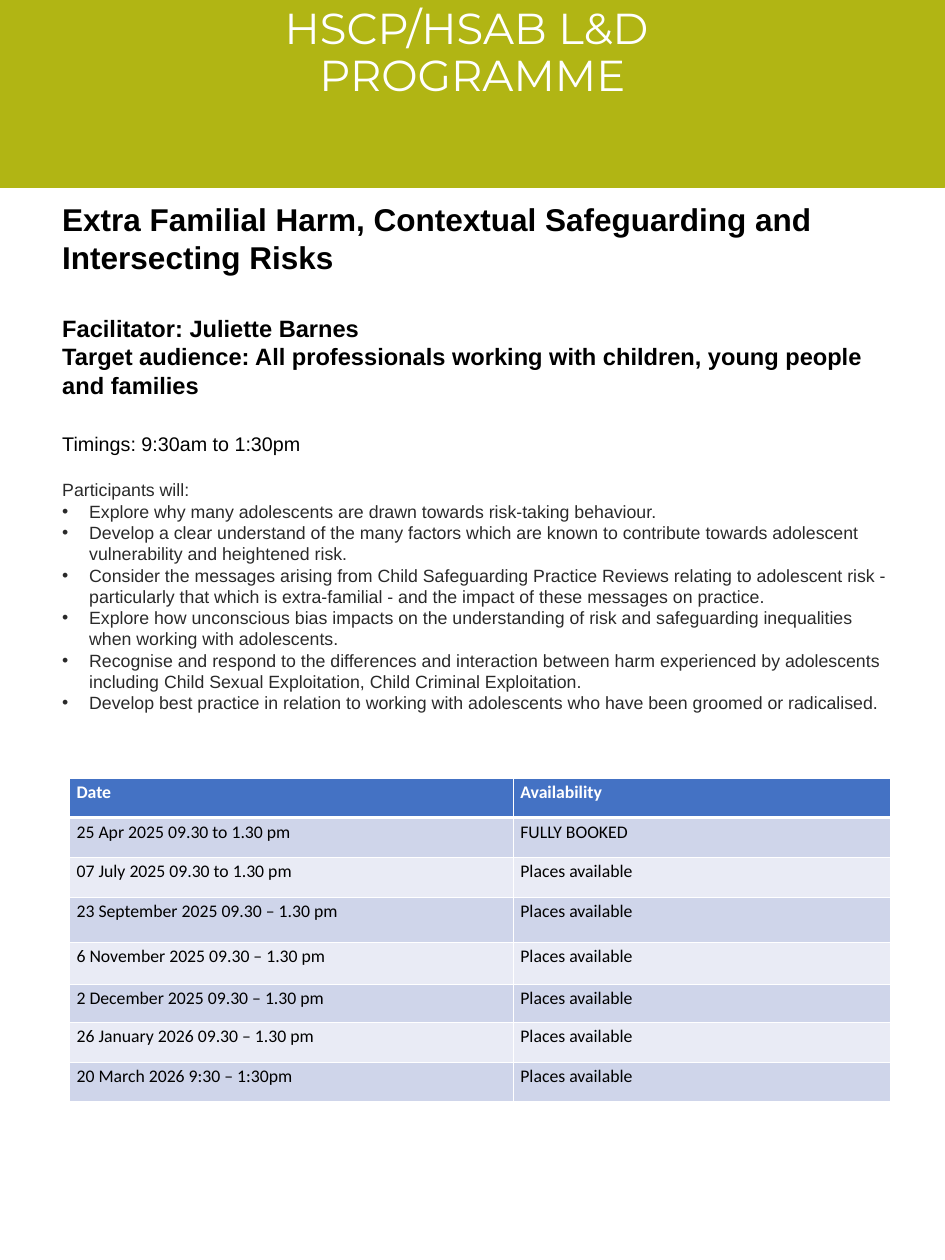
from lxml import etree
from pptx import Presentation
from pptx.dml.color import RGBColor
from pptx.enum.shapes import MSO_SHAPE
from pptx.enum.text import MSO_ANCHOR, PP_ALIGN
from pptx.oxml.ns import qn
from pptx.util import Inches, Pt

RECTANGLE = MSO_SHAPE.RECTANGLE
TOP = MSO_ANCHOR.TOP
CENTER, LEFT = PP_ALIGN.CENTER, PP_ALIGN.LEFT

WIDTH, HEIGHT = 13.33, 17.78
BLACK, WHITE, GREY = "000000", "FFFFFF", "2A2A2A"
LIME, HEADER_BLUE = "B1B514", "4472C4"
BANDS = ["CFD5EA", "E9EBF5"]

# text, size, bold, colour, space before in points
INTRODUCTION = [
    ("Extra Familial Harm, Contextual Safeguarding and Intersecting Risks", 32, True, BLACK, 0),
    ("Facilitator: Juliette Barnes", 24, True, BLACK, 38.5),
    ("Target audience: All professionals working with children, young people and families",
     24, True, BLACK, 0),
    ("Timings: 9:30am to 1:30pm", 20, False, BLACK, 33.5),
    ("Participants will:", 18, False, GREY, 24),
]
OUTCOMES = [
    "Explore why many adolescents are drawn towards risk-taking behaviour.",
    "Develop a clear understand of the many factors which are known to contribute towards "
    "adolescent vulnerability and heightened risk.",
    "Consider the messages arising from Child Safeguarding Practice Reviews relating to "
    "adolescent risk - particularly that which is extra-familial - and the impact of these "
    "messages on practice.",
    "Explore how unconscious bias impacts on the understanding of risk and safeguarding "
    "inequalities when working with adolescents.",
    "Recognise and respond to the differences and interaction between harm experienced by "
    "adolescents including Child Sexual Exploitation, Child Criminal Exploitation.",
    "Develop best practice in relation to working with adolescents who have been groomed or "
    "radicalised.",
]
AVAILABLE = "Places available"
SESSIONS = [
    ("Date", "Availability"),
    ("25 Apr 2025 09.30 to 1.30 pm", "FULLY BOOKED"),
    ("07 July 2025 09.30 to 1.30 pm", AVAILABLE),
    ("23 September 2025 09.30 – 1.30 pm", AVAILABLE),
    ("6 November 2025 09.30 – 1.30 pm", AVAILABLE),
    ("2 December 2025 09.30 – 1.30 pm", AVAILABLE),
    ("26 January 2026 09.30 – 1.30 pm", AVAILABLE),
    ("20 March 2026 9:30 – 1:30pm", AVAILABLE),
]
COLUMN_WIDTHS = [6.26, 5.32]
ROW_HEIGHTS = [0.56, 0.56, 0.56, 0.64, 0.59, 0.54, 0.56, 0.56]


def color(value):
    return RGBColor.from_string(value)


def add_bullet(paragraph, indent):
    properties = paragraph._p.get_or_add_pPr()
    properties.set("marL", str(Inches(indent)))
    properties.set("indent", str(-Inches(indent)))
    etree.SubElement(properties, qn("a:buFont")).set("typeface", "Arial")
    etree.SubElement(properties, qn("a:buChar")).set("char", "•")


def add_border(cell, side, points):
    """Draw a white border on one side (L, R, T or B); call before the cell is filled."""
    line = etree.SubElement(cell._tc.get_or_add_tcPr(), qn("a:ln" + side))
    line.set("w", str(Pt(points)))
    fill = etree.SubElement(line, qn("a:solidFill"))
    etree.SubElement(fill, qn("a:srgbClr")).set("val", WHITE)


class Flyer:
    def __init__(self, slide, body_font="Arial", title_font="Montserrat", table_font="Calibri"):
        self.slide = slide
        self.body_font = body_font
        self.title_font = title_font
        self.table_font = table_font

    def add_run(self, paragraph, text, font, size, text_color, bold=False):
        run = paragraph.add_run()
        run.text = text
        run.font.name = font
        run.font.size = Pt(size)
        run.font.bold = bold
        run.font.color.rgb = color(text_color)

    def text_frame(self, left, top, width, height):
        box = self.slide.shapes.add_textbox(
            Inches(left), Inches(top), Inches(width), Inches(height))
        frame = box.text_frame
        frame.word_wrap = True
        frame.vertical_anchor = TOP
        return frame

    def banner(self, height):
        band = self.slide.shapes.add_shape(RECTANGLE, 0, 0, Inches(WIDTH), Inches(height))
        band.shadow.inherit = False
        band.fill.solid()
        band.fill.fore_color.rgb = color(LIME)
        band.line.color.rgb = color(LIME)
        band.line.width = Pt(1)

    def title(self, lines, top, height):
        heading = self.text_frame(0, top, WIDTH, height).paragraphs[0]
        heading.alignment = CENTER
        heading.line_spacing = 0.9
        for number, line in enumerate(lines):
            if number:
                heading.add_line_break()
            self.add_run(heading, line, self.title_font, 44, WHITE)

    def course_details(self, left, top, width, height):
        frame = self.text_frame(left, top, width, height)
        for number, (text, size, bold, text_color, gap) in enumerate(INTRODUCTION):
            paragraph = frame.add_paragraph() if number else frame.paragraphs[0]
            paragraph.alignment = LEFT
            if gap:
                paragraph.space_before = Pt(gap)
            self.add_run(paragraph, text, self.body_font, size, text_color, bold)
        for outcome in OUTCOMES:
            paragraph = frame.add_paragraph()
            add_bullet(paragraph, 0.38)
            self.add_run(paragraph, outcome, self.body_font, 18, GREY)

    def session_table(self, left, top):
        table = self.slide.shapes.add_table(
            len(SESSIONS), len(COLUMN_WIDTHS), Inches(left), Inches(top),
            Inches(sum(COLUMN_WIDTHS)), Inches(sum(ROW_HEIGHTS))).table
        for column, width in zip(table.columns, COLUMN_WIDTHS):
            column.width = Inches(width)
        for number, (row, height, session) in enumerate(zip(table.rows, ROW_HEIGHTS, SESSIONS)):
            row.height = Inches(height)
            is_header = number == 0
            for cell, text in zip(row.cells, session):
                add_border(cell, "L", 1)
                add_border(cell, "R", 1)
                add_border(cell, "T", 3 if number == 1 else 1)
                add_border(cell, "B", 3 if is_header else 1)
                cell.fill.solid()
                cell.fill.fore_color.rgb = color(
                    HEADER_BLUE if is_header else BANDS[(number - 1) % 2])
                self.add_run(cell.text_frame.paragraphs[0], text, self.table_font, 18,
                             WHITE if is_header else BLACK, is_header)


def main():
    presentation = Presentation()
    presentation.slide_width = Inches(WIDTH)
    presentation.slide_height = Inches(HEIGHT)
    flyer = Flyer(presentation.slides.add_slide(presentation.slide_layouts[6]))
    flyer.banner(2.64)
    flyer.title(["HSCP/HSAB L&D ", "PROGRAMME"], 0.05, 2.26)
    flyer.course_details(0.78, 2.78, 11.97, 13.09)
    flyer.session_table(0.98, 10.98)
    presentation.save("out.pptx")


if __name__ == "__main__":
    main()
